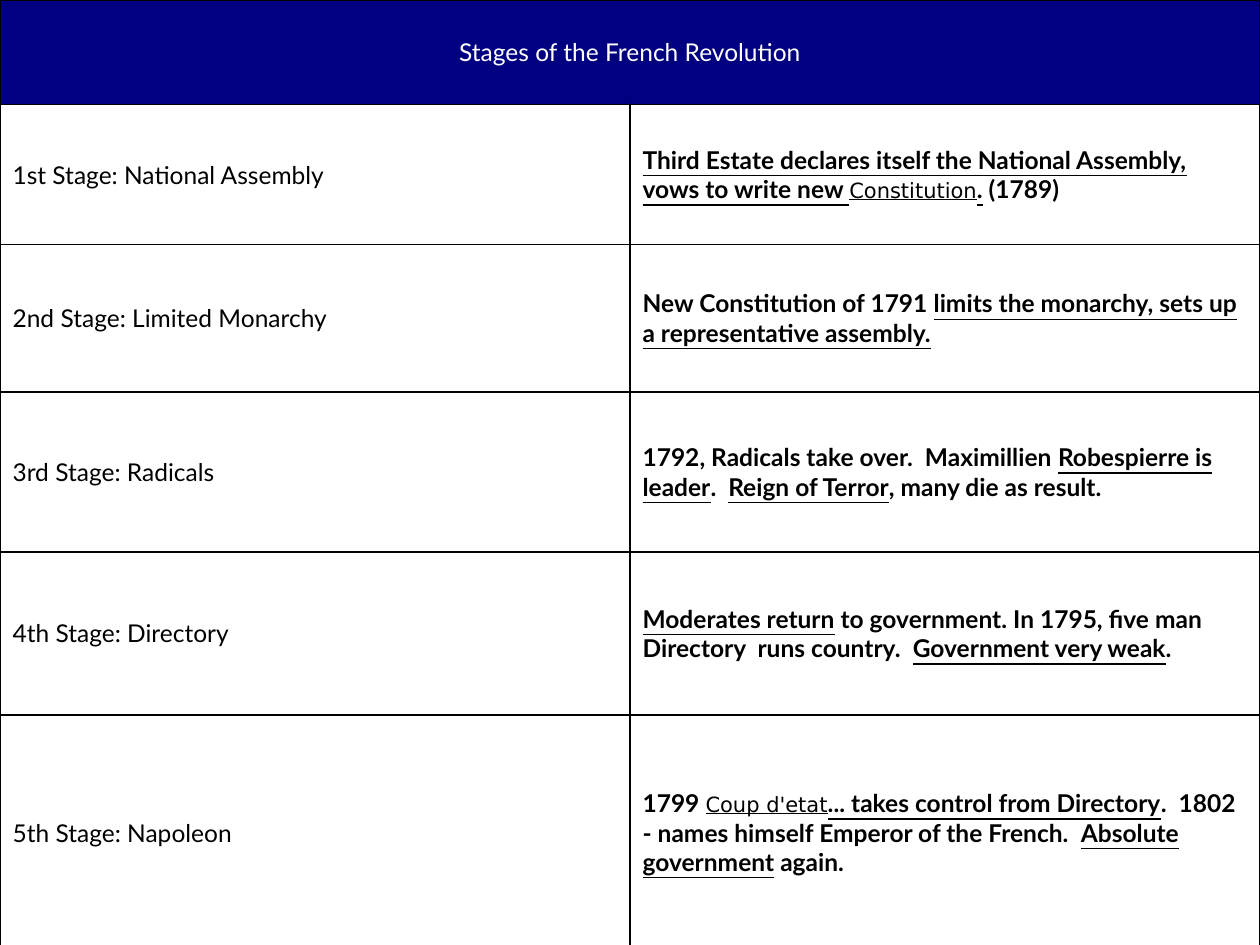
from dataclasses import dataclass

from lxml import etree
from pptx import Presentation
from pptx import util as u
from pptx.dml.color import RGBColor
from pptx.enum import text
from pptx.oxml import ns


@dataclass(frozen=True)
class Theme:
    navy: str = "000080"
    white: str = "FFFFFF"
    black: str = "000000"
    font: str = "Lato"
    term_font: str = "DejaVu Sans"
    size: int = 14
    term_size: int = 12
    border: int = 1


@dataclass(frozen=True)
class Span:
    text: str
    bold: bool = True
    underline: bool = False
    term: bool = False


@dataclass(frozen=True)
class Stage:
    name: str
    height: float
    spans: tuple[Span, ...]


def key(words: str) -> Span:
    return Span(words, underline=True)


def term(words: str) -> Span:
    return Span(words, bold=False, underline=True, term=True)


T = Theme()
TITLE = "Stages of the French Revolution"
TITLE_HEIGHT = 2.11
WIDTH, HEIGHT = 25.4, 19.05
STAGES = (
    Stage("1st Stage: National Assembly", 2.82, (
        key("Third Estate declares itself the National Assembly, vows to write new "),
        term("Constitution"), key("."), Span(" (1789)"))),
    Stage("2nd Stage: Limited Monarchy", 2.97, (
        Span("New Constitution of 1791 "),
        key("limits the monarchy, sets up a representative assembly."))),
    Stage("3rd Stage: Radicals", 3.23, (
        Span("1792, Radicals take over.  Maximillien "), key("Robespierre is leader"),
        Span(".  "), key("Reign of Terror"), Span(", many die as result."))),
    Stage("4th Stage: Directory", 3.28, (
        key("Moderates return"),
        Span(" to government. In 1795, five man Directory  runs country.  "),
        key("Government very weak"), Span("."))),
    Stage("5th Stage: Napoleon", 4.75, (
        Span("1799 "), term("Coup d'etat"), key("... takes control from Directory"),
        Span(".  1802 - names himself Emperor of the French.  "),
        key("Absolute government"), Span(" again."))),
)


def draw_borders(cell) -> None:
    tc_pr = cell._tc.get_or_add_tcPr()
    for side in ("lnL", "lnR", "lnT", "lnB"):
        ln = etree.SubElement(tc_pr, ns.qn(f"a:{side}"), w=str(u.Pt(T.border)))
        fill = etree.SubElement(ln, ns.qn("a:solidFill"))
        etree.SubElement(fill, ns.qn("a:srgbClr"), val=T.black)


def fill_cell(cell, spans: tuple[Span, ...], fill: str = T.white,
              color: str = T.black, align=text.PP_ALIGN.LEFT) -> None:
    cell.fill.solid()
    cell.fill.fore_color.rgb = RGBColor.from_string(fill)
    cell.vertical_anchor = text.MSO_ANCHOR.MIDDLE
    p = cell.text_frame.paragraphs[0]
    p.alignment = align
    for span in spans:
        r = p.add_run()
        r.text = span.text
        r.font.name = T.term_font if span.term else T.font
        r.font.size = u.Pt(T.term_size if span.term else T.size)
        r.font.bold = span.bold
        r.font.underline = span.underline
        r.font.color.rgb = RGBColor.from_string(color)


def draw_table(s) -> None:
    heights = [TITLE_HEIGHT, *(stage.height for stage in STAGES)]
    table = s.shapes.add_table(len(heights), 2, 0, 0,
                               u.Cm(WIDTH), u.Cm(sum(heights))).table
    for column in table.columns:
        column.width = u.Cm(WIDTH / 2)
    for row, height in zip(table.rows, heights):
        row.height = u.Cm(height)
    for cell in table.iter_cells():
        draw_borders(cell)
    table.cell(0, 0).merge(table.cell(0, 1))
    fill_cell(table.cell(0, 0), (Span(TITLE, bold=False),),
              T.navy, T.white, text.PP_ALIGN.CENTER)
    for i, stage in enumerate(STAGES, 1):
        fill_cell(table.cell(i, 0), (Span(stage.name, bold=False),))
        fill_cell(table.cell(i, 1), stage.spans)


def main() -> None:
    prs = Presentation()
    prs.slide_width, prs.slide_height = u.Cm(WIDTH), u.Cm(HEIGHT)
    s = prs.slides.add_slide(prs.slide_layouts[6])
    draw_table(s)
    prs.save("out.pptx")


if __name__ == "__main__":
    main()
